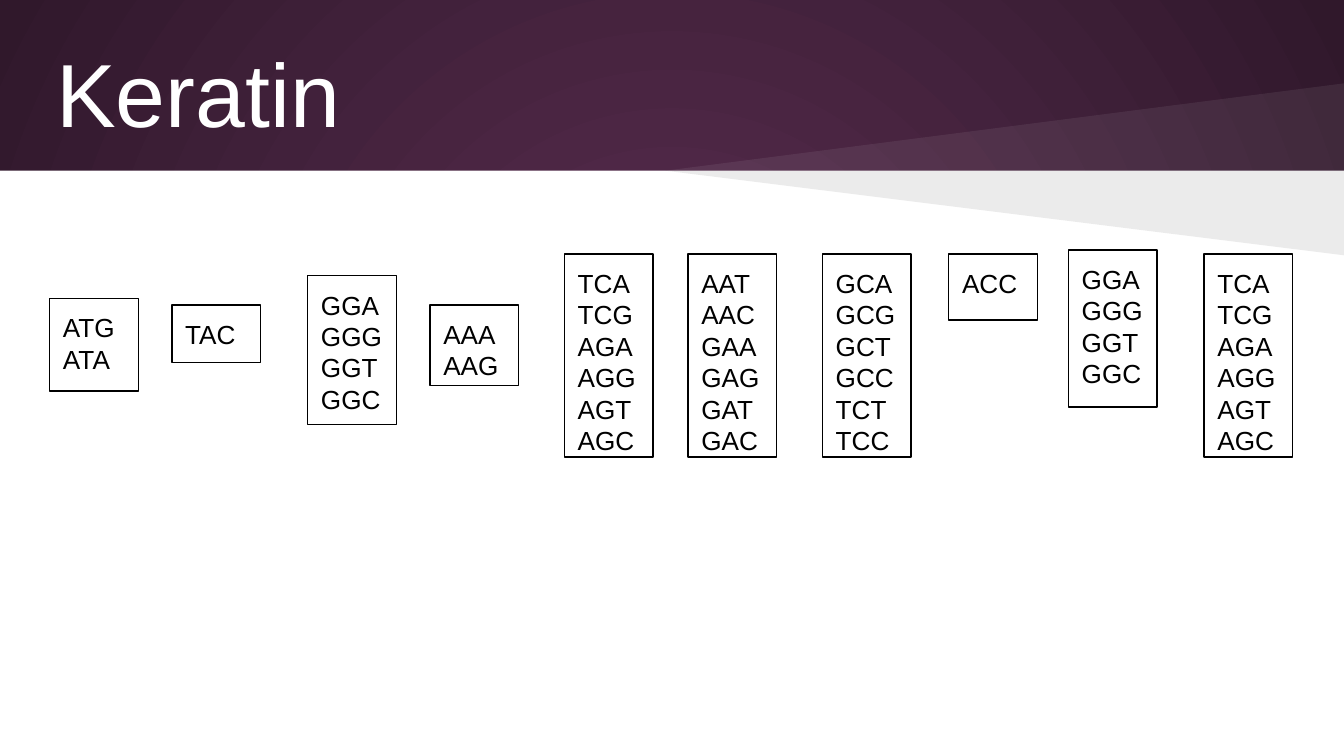
import pptx
import pptx.dml.color
import pptx.enum.shapes
import pptx.enum.text
import pptx.oxml
import pptx.oxml.ns
import pptx.util
from pptx.util import Inches

RGBColor = pptx.dml.color.RGBColor
WHITE = RGBColor(0xFF, 0xFF, 0xFF)
BLACK = RGBColor(0, 0, 0)
PLUM = RGBColor(0x59, 0x2D, 0x50)
DARK_PLUM = RGBColor(0x30, 0x18, 0x2B)

FONT = "Arial"
SLIDE_WIDTH = 10
SLIDE_HEIGHT = SLIDE_WIDTH * 9 / 16
BAND_BOTTOM = 1.27
BOX_WIDTH = 0.66

# left, top, height, codons ("\v" breaks a line, "\n" starts a paragraph)
SERINE = "TCA\vTCG\nAGA\vAGG\vAGT\vAGC"
GLYCINE = "GGA\vGGG\vGGT\vGGC"
CODON_BOXES = [
    (0.37, 2.22, 0.69, "ATG\vATA"),
    (1.28, 2.27, 0.43, "TAC"),
    (2.29, 2.05, 1.11, GLYCINE),
    (3.2, 2.27, 0.6, "AAA\vAAG"),
    (4.2, 1.89, 1.51, SERINE),
    (5.12, 1.89, 1.51, "AAT\vAAC\vGAA\vGAG\nGAT\nGAC"),
    (6.12, 1.89, 1.51, "GCA\vGCG\vGCT\vGCC\vTCT\nTCC"),
    (7.06, 1.89, 0.49, "ACC"),
    (7.95, 1.86, 1.17, GLYCINE),
    (8.96, 1.89, 1.51, SERINE),
]


def set_radial_background(s):
    fill = s.background.fill
    fill.gradient()
    for stop, color in zip(fill.gradient_stops, (PLUM, DARK_PLUM)):
        stop.color.rgb = color
    grad = s.background._cSld.find(".//" + pptx.oxml.ns.qn("a:gradFill"))
    grad.replace(grad.find(pptx.oxml.ns.qn("a:lin")), pptx.oxml.parse_xml(
        f'<a:path {pptx.oxml.ns.nsdecls("a")} path="circle">'
        '<a:fillToRect l="50000" t="50000" r="50000" b="50000"/></a:path>'))


def add_rectangle(s, left, top, width, height):
    sp = s.shapes.add_shape(
        pptx.enum.shapes.MSO_SHAPE.RECTANGLE,
        Inches(left), Inches(top), Inches(width), Inches(height))
    sp.shadow.inherit = False
    return sp


def add_wedge(s, edge_y, color, opacity):
    """Add a see-through triangle from the band's bottom to the right edge."""
    builder = s.shapes.build_freeform(
        Inches(SLIDE_WIDTH), Inches(BAND_BOTTOM), scale=1.0)
    builder.add_line_segments([
        (Inches(4.95), Inches(BAND_BOTTOM)),
        (Inches(SLIDE_WIDTH), Inches(edge_y))])
    sp = builder.convert_to_shape()
    sp.shadow.inherit = False
    sp.line.fill.background()
    sp.fill.solid()
    sp.fill.fore_color.rgb = color
    clr = sp.fill._xPr.find(".//" + pptx.oxml.ns.qn("a:srgbClr"))
    clr.append(pptx.oxml.parse_xml(
        f'<a:alpha {pptx.oxml.ns.nsdecls("a")} val="{opacity * 1000}"/>'))


def write_text(sp, text, size, color):
    tf = sp.text_frame
    tf.word_wrap = True
    tf.vertical_anchor = pptx.enum.text.MSO_ANCHOR.TOP
    tf.margin_left = tf.margin_right = Inches(0.1)
    tf.margin_top = tf.margin_bottom = Inches(0.1)
    tf.text = text
    for p in tf.paragraphs:
        p.alignment = pptx.enum.text.PP_ALIGN.LEFT
        p.font.name = FONT
        p.font.size = pptx.util.Pt(size)
        p.font.color.rgb = color


def add_codon_box(s, left, top, height, codons):
    sp = add_rectangle(s, left, top, BOX_WIDTH, height)
    sp.fill.background()
    sp.line.color.rgb = BLACK
    sp.line.width = pptx.util.Pt(0.75)
    write_text(sp, codons, 14, BLACK)


def main():
    prs = pptx.Presentation()
    prs.slide_width = Inches(SLIDE_WIDTH)
    prs.slide_height = Inches(SLIDE_HEIGHT)
    s = prs.slides.add_slide(prs.slide_layouts[6])

    set_radial_background(s)
    page = add_rectangle(
        s, 0, BAND_BOTTOM, SLIDE_WIDTH, SLIDE_HEIGHT - BAND_BOTTOM)
    page.fill.solid()
    page.fill.fore_color.rgb = WHITE
    page.line.fill.background()
    add_wedge(s, 0.62, WHITE, 7)
    add_wedge(s, 1.9, BLACK, 8)

    title = s.shapes.add_textbox(
        Inches(0.32), Inches(0.18), Inches(8.68), Inches(0.97))
    write_text(title, "Keratin", 48, WHITE)

    for box in CODON_BOXES:
        add_codon_box(s, *box)

    prs.save("out.pptx")


if __name__ == "__main__":
    main()
